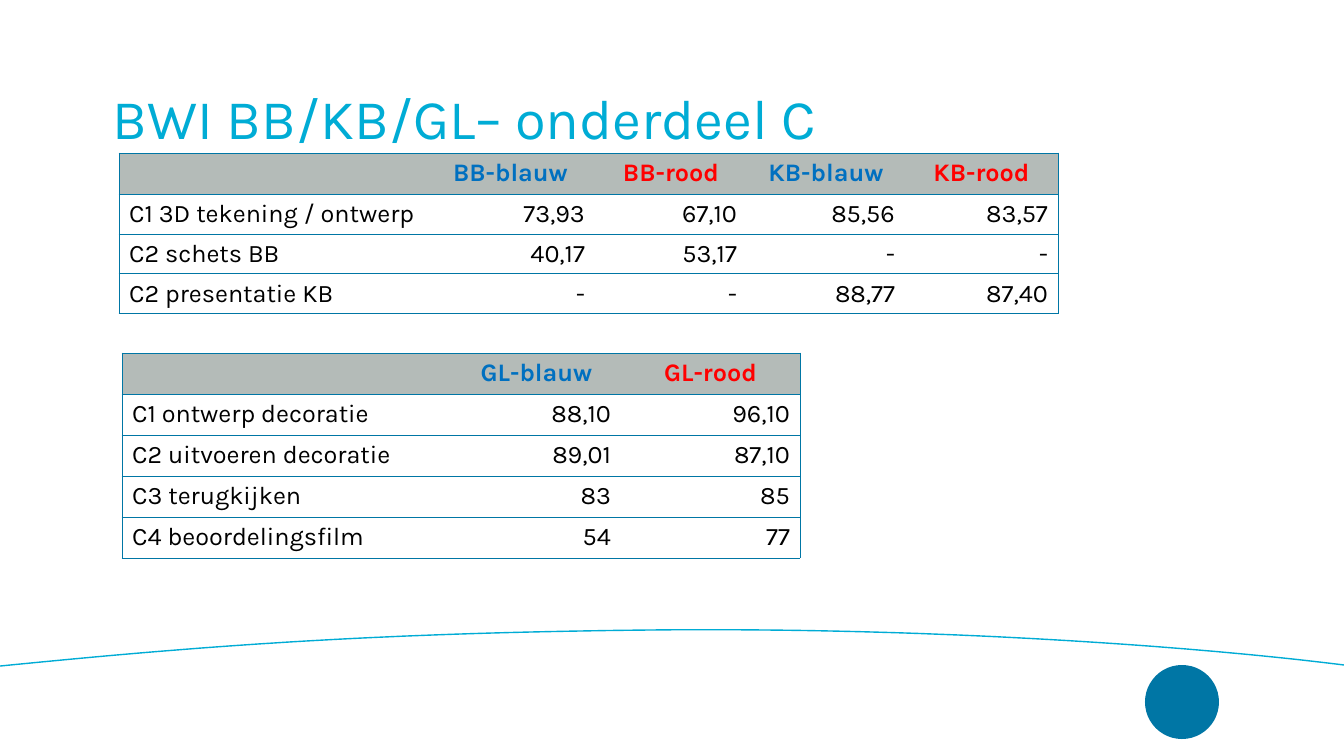
from lxml import etree
from pptx import Presentation
from pptx.dml.color import RGBColor
from pptx.enum.shapes import MSO_SHAPE
from pptx.enum.text import MSO_ANCHOR, MSO_AUTO_SIZE, PP_ALIGN
from pptx.oxml.ns import qn
from pptx.util import Pt

LEFT, CENTER, RIGHT = PP_ALIGN.LEFT, PP_ALIGN.CENTER, PP_ALIGN.RIGHT
MIDDLE, NO_AUTOFIT, OVAL = MSO_ANCHOR.MIDDLE, MSO_AUTO_SIZE.NONE, MSO_SHAPE.OVAL

SLIDE_WIDTH, SLIDE_HEIGHT = 1344, 756
FONT = "Karla"
CYAN, BORDER, HEADER_FILL = "00ACD5", "0076A5", "B4BBB8"
BLACK, WHITE = "000000", "FFFFFF"
HEADER_COLORS = {"blauw": "0070C0", "rood": "FF0000"}

TITLE = "BWI BB/KB/GL– onderdeel C"
TITLE_BOX = (113, 48, 1119, 146)
TABLES = [
    {
        "position": (119, 153),
        "columns": [307, 169, 152, 158, 153],
        "row_height": 40,
        "rows": [
            ["", "BB-blauw", "BB-rood", "KB-blauw", "KB-rood"],
            ["C1 3D tekening / ontwerp", "73,93", "67,10", "85,56", "83,57"],
            ["C2 schets BB", "40,17", "53,17", "-", "-"],
            ["C2 presentatie KB", "-", "-", "88,77", "87,40"],
        ],
    },
    {
        "position": (122, 353),
        "columns": [330, 169, 179],
        "row_height": 41,
        "rows": [
            ["", "GL-blauw", "GL-rood"],
            ["C1 ontwerp decoratie", "88,10", "96,10"],
            ["C2 uitvoeren decoratie", "89,01", "87,10"],
            ["C3 terugkijken", "83", "85"],
            ["C4 beoordelingsfilm", "54", "77"],
        ],
    },
]
HORIZON = [
    [(0, 666), (192, 647), (363, 633), (650, 630)],
    [(650, 630), (937, 627), (1202, 647), (1344, 665)],
]
HORIZON_STEPS = 40
EMBLEM_BOX = (1145, 665, 74, 74)


def px(length):
    return round(length * 12192000 / SLIDE_WIDTH)


def color(value):
    return RGBColor.from_string(value)


def add_run(paragraph, text, size, text_color, bold=False):
    run = paragraph.add_run()
    run.text = text
    run.font.name = FONT
    run.font.size = Pt(size)
    run.font.bold = bold
    run.font.color.rgb = color(text_color)


def set_borders(cell, sides):
    properties = cell._tc.get_or_add_tcPr()
    for index, side in enumerate("LRTB"):
        line = etree.Element(qn(f"a:ln{side}"), w=str(Pt(0.5)))
        if side in sides:
            fill = etree.SubElement(line, qn("a:solidFill"))
            etree.SubElement(fill, qn("a:srgbClr"), val=BORDER)
        else:
            etree.SubElement(line, qn("a:noFill"))
        properties.insert(index, line)


def fill_cell(cell, text, row, column, last_column):
    cell.fill.solid()
    cell.fill.fore_color.rgb = color(WHITE if row else HEADER_FILL)
    left = "L" if column == 0 else ""
    right = "R" if column == last_column else ""
    set_borders(cell, "TB" + left + right)
    paragraph = cell.text_frame.paragraphs[0]
    paragraph.font.size = Pt(18)
    if not text:
        return
    if row:
        paragraph.alignment = RIGHT if column else LEFT
        add_run(paragraph, text, 18, BLACK)
    else:
        paragraph.alignment = CENTER
        add_run(paragraph, text, 18, HEADER_COLORS[text.split("-")[1]], True)


def add_score_table(slide, content):
    rows, columns = content["rows"], content["columns"]
    left, top = content["position"]
    height = content["row_height"]
    table = slide.shapes.add_table(
        len(rows), len(columns), px(left), px(top),
        px(sum(columns)), px(height * len(rows)),
    ).table
    table.horz_banding = False
    for column, width in zip(table.columns, columns):
        column.width = px(width)
    for row, values in enumerate(rows):
        table.rows[row].height = px(height)
        for column, text in enumerate(values):
            fill_cell(table.cell(row, column), text, row, column, len(columns) - 1)


def curve_point(controls, t):
    weights = ((1 - t) ** 3, 3 * t * (1 - t) ** 2, 3 * t * t * (1 - t), t ** 3)
    return tuple(
        px(sum(weight * point[axis] for weight, point in zip(weights, controls)))
        for axis in (0, 1)
    )


def add_horizon(slide):
    points = [
        curve_point(controls, step / HORIZON_STEPS)
        for controls in HORIZON
        for step in range(1, HORIZON_STEPS + 1)
    ]
    builder = slide.shapes.build_freeform(*curve_point(HORIZON[0], 0))
    builder.add_line_segments(points, close=False)
    horizon = builder.convert_to_shape()
    horizon.shadow.inherit = False
    horizon.fill.background()
    horizon.line.color.rgb = color(CYAN)
    horizon.line.width = Pt(1)


def add_emblem(slide):
    emblem = slide.shapes.add_shape(OVAL, *map(px, EMBLEM_BOX))
    emblem.shadow.inherit = False
    emblem.fill.solid()
    emblem.fill.fore_color.rgb = color(BORDER)
    emblem.line.fill.background()


def set_title(slide):
    title = slide.shapes.title
    title.left, title.top, title.width, title.height = map(px, TITLE_BOX)
    frame = title.text_frame
    frame.margin_left = frame.margin_right = frame.margin_top = frame.margin_bottom = 0
    frame.vertical_anchor = MIDDLE
    frame.auto_size = NO_AUTOFIT
    frame.word_wrap = True
    paragraph = frame.paragraphs[0]
    paragraph.alignment = LEFT
    paragraph.line_spacing = 0.9
    add_run(paragraph, TITLE, 40, CYAN)


def main():
    presentation = Presentation()
    presentation.slide_width = px(SLIDE_WIDTH)
    presentation.slide_height = px(SLIDE_HEIGHT)
    slide = presentation.slides.add_slide(presentation.slide_layouts[5])
    add_emblem(slide)
    add_horizon(slide)
    set_title(slide)
    for content in TABLES:
        add_score_table(slide, content)
    presentation.save("out.pptx")


if __name__ == "__main__":
    main()
